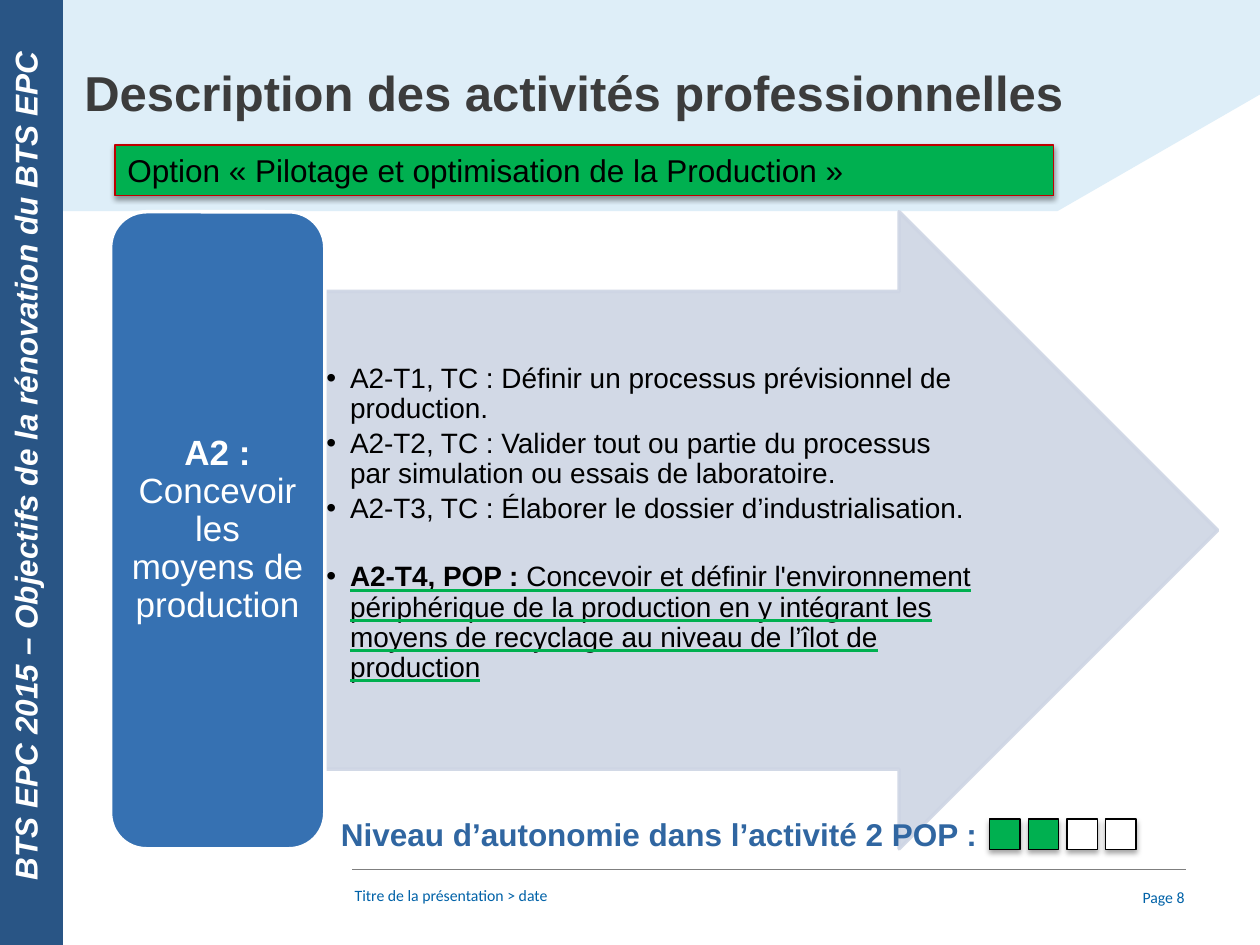
from lxml import etree
from pptx import Presentation
from pptx.dml.color import RGBColor
from pptx.enum.shapes import MSO_CONNECTOR, MSO_SHAPE
from pptx.enum.text import MSO_ANCHOR, MSO_UNDERLINE, PP_ALIGN
from pptx.oxml.ns import qn
from pptx.util import Pt

RECTANGLE, ROUNDED, ARROW = MSO_SHAPE.RECTANGLE, MSO_SHAPE.ROUNDED_RECTANGLE, MSO_SHAPE.RIGHT_ARROW
TOP, MIDDLE = MSO_ANCHOR.TOP, MSO_ANCHOR.MIDDLE
LEFT, CENTER, RIGHT = PP_ALIGN.LEFT, PP_ALIGN.CENTER, PP_ALIGN.RIGHT
HEAVY = MSO_UNDERLINE.HEAVY_LINE

COLORS = {
    "sky": "DEEEF8", "footer": "0062A8", "rule": "7F7F7F", "title": "3C3C3C",
    "arrow": "CED5E4", "activity": "3671B2", "sidebar": "295585", "green": "00B050",
    "red": "C00000", "level": "3066A1", "black": "000000", "white": "FFFFFF",
}

TITLE = "Description des activités professionnelles"
SIDEBAR = "BTS EPC 2015 – Objectifs de la rénovation du BTS EPC"
OPTION = "Option « Pilotage et optimisation de la Production »"
ACTIVITY = [("A2 : ", True), ("Concevoir les moyens de production", False)]
TASKS = [
    "A2-T1, TC : Définir un processus prévisionnel de production.",
    "A2-T2, TC : Valider tout ou partie du processus par simulation ou essais de laboratoire.",
    "A2-T3, TC : Élaborer le dossier d’industrialisation.",
]
OPTION_TASK = [
    ("A2-T4, POP : ", True),
    ("Concevoir et définir l'environnement périphérique de la production en y intégrant "
     "les moyens de recyclage au niveau de l’îlot de production", False),
]
LEVEL = "Niveau d’autonomie dans l’activité 2 POP :"
LEVEL_SQUARES = ["green", "green", "white", "white"]
FOOTER = "Titre de la présentation > date"
PAGE = "Page 8"
BACKDROP = [(720, 0), (0, 0), (0, 120.6), (604.4, 120.6), (720, 54)]

presentation = Presentation()
presentation.slide_width, presentation.slide_height = Pt(720), Pt(540)
slide = presentation.slides.add_slide(presentation.slide_layouts[5])
shapes = slide.shapes


def rgb(name):
    return RGBColor.from_string(COLORS[name])


def add_text(paragraph, text, size=18, color="black", font="Arial", bold=False,
             italic=False, underline=None, align=LEFT):
    paragraph.alignment = align
    run = paragraph.add_run()
    run.text = text
    run.font.size, run.font.bold, run.font.italic = Pt(size), bold, italic
    run.font.color.rgb = rgb(color)
    if underline:
        run.font.underline = HEAVY
        line_fill = etree.SubElement(run.font._element, qn("a:uFill"))
        solid = etree.SubElement(line_fill, qn("a:solidFill"))
        etree.SubElement(solid, qn("a:srgbClr"), val=COLORS[underline])
    run.font.name = font


def set_frame(shape, anchor=TOP, insets=(7.2, 3.6, 7.2, 3.6)):
    frame = shape.text_frame
    frame.word_wrap = True
    frame.vertical_anchor = anchor
    frame.margin_left, frame.margin_top, frame.margin_right, frame.margin_bottom = map(Pt, insets)
    return frame


def add_box(left, top, width, height, **frame_format):
    box = shapes.add_textbox(Pt(left), Pt(top), Pt(width), Pt(height))
    return set_frame(box, **frame_format)


def paint(shape, fill, line=None, width=0.75):
    shape.shadow.inherit = False
    shape.fill.solid()
    shape.fill.fore_color.rgb = rgb(fill)
    if line:
        shape.line.color.rgb = rgb(line)
        shape.line.width = Pt(width)
    else:
        shape.line.fill.background()


def add_shape(kind, left, top, width, height, *colors):
    shape = shapes.add_shape(kind, Pt(left), Pt(top), Pt(width), Pt(height))
    paint(shape, *colors)
    return shape


def add_shadow(shape, distance, opacity):
    effects = shape._element.spPr.find(qn("a:effectLst"))
    shadow = etree.SubElement(effects, qn("a:outerShdw"), blurRad=str(Pt(3.1)),
                              dist=str(Pt(distance)), dir="5400000", rotWithShape="0")
    color = etree.SubElement(shadow, qn("a:srgbClr"), val=COLORS["black"])
    etree.SubElement(color, qn("a:alpha"), val=str(opacity * 1000))


def set_indent(paragraph, left, first=0, bullet=None):
    properties = paragraph._p.get_or_add_pPr()
    properties.set("marL", str(Pt(left)))
    properties.set("indent", str(Pt(first)))
    if bullet:
        etree.SubElement(properties, qn("a:buFont"), typeface="Arial")
        etree.SubElement(properties, qn("a:buChar"), char=bullet)


builder = shapes.build_freeform(Pt(BACKDROP[0][0]), Pt(BACKDROP[0][1]))
builder.add_line_segments([(Pt(x), Pt(y)) for x, y in BACKDROP[1:]], close=True)
backdrop = builder.convert_to_shape()
paint(backdrop, "sky")

footer = add_box(195.6, 502.5, 425.5, 18)
add_text(footer.paragraphs[0], FOOTER, size=9, color="footer", font="Calibri")
page = add_box(620.5, 500.5, 63.5, 24.5, anchor=MIDDLE)
add_text(page.paragraphs[0], PAGE, size=9, color="footer", font="Calibri", align=RIGHT)
rule = shapes.add_connector(MSO_CONNECTOR.STRAIGHT, Pt(201.3), Pt(496.8), Pt(677.5), Pt(496.8))
rule.line.color.rgb = rgb("rule")
rule.line.width = Pt(0.5)
etree.SubElement(rule._element.spPr, qn("a:effectLst"))

title = shapes.title
backdrop._element.getparent().append(title._element)
title.left, title.top, title.width, title.height = Pt(48.2), Pt(21), Pt(648), Pt(62.5)
title_frame = set_frame(title, anchor=MIDDLE, insets=(0, 0, 0, 0))
add_text(title_frame.paragraphs[0], TITLE, size=28, color="title", bold=True)

arrow = add_shape(ARROW, 185.8, 121, 510, 364, "arrow", "arrow", 2)
arrow.adjustments[0], arrow.adjustments[1] = 0.75, 0.5
for color in arrow._element.spPr.iter(qn("a:srgbClr")):
    etree.SubElement(color, qn("a:alpha"), val="90000")

tasks = add_box(185.8, 166.3, 373.7, 273, insets=(0.7, 42, 0.7, 0.7))
for index, runs in enumerate([[(task, False)] for task in TASKS] + [OPTION_TASK]):
    paragraph = tasks.add_paragraph() if index else tasks.paragraphs[0]
    paragraph.line_spacing = 0.9
    paragraph.space_after = Pt(2.5)
    if runs is OPTION_TASK:
        paragraph.space_before = Pt(19.5)
    set_indent(paragraph, 13.5, -13.5, "•")
    for text, bold in runs:
        add_text(paragraph, text, size=16, bold=bold,
                 underline="green" if runs is OPTION_TASK else None)

add_shape(ROUNDED, 63.2, 121, 122.4, 364, "activity", "white", 2)
activity = add_box(69.1, 127, 110.4, 352, anchor=MIDDLE, insets=(6, 3, 6, 3))
activity.paragraphs[0].line_spacing = 0.9
for text, bold in ACTIVITY:
    add_text(activity.paragraphs[0], text, size=20, color="white", bold=bold, align=CENTER)

sidebar = add_shape(RECTANGLE, 0, 0, 36, 540, "sidebar")
sidebar_frame = set_frame(sidebar)
sidebar_frame._txBody.bodyPr.set("vert", "vert270")
set_indent(sidebar_frame.paragraphs[0], 30)
add_text(sidebar_frame.paragraphs[0], SIDEBAR, color="white", bold=True, italic=True)

option = add_shape(RECTANGLE, 65.7, 82.8, 536.4, 29, "green", "red")
add_shadow(option, 1.6, 38)
add_text(set_frame(option).paragraphs[0], OPTION)

level = add_box(187.7, 462.2, 431, 29)
add_text(level.paragraphs[0], LEVEL, color="level", bold=True)
for index, fill in enumerate(LEVEL_SQUARES):
    square = add_shape(RECTANGLE, 565.6 + 22.1 * index, 468, 17.3, 17.3, fill, "black")
    add_shadow(square, 1.8, 35)

presentation.save("out.pptx")
